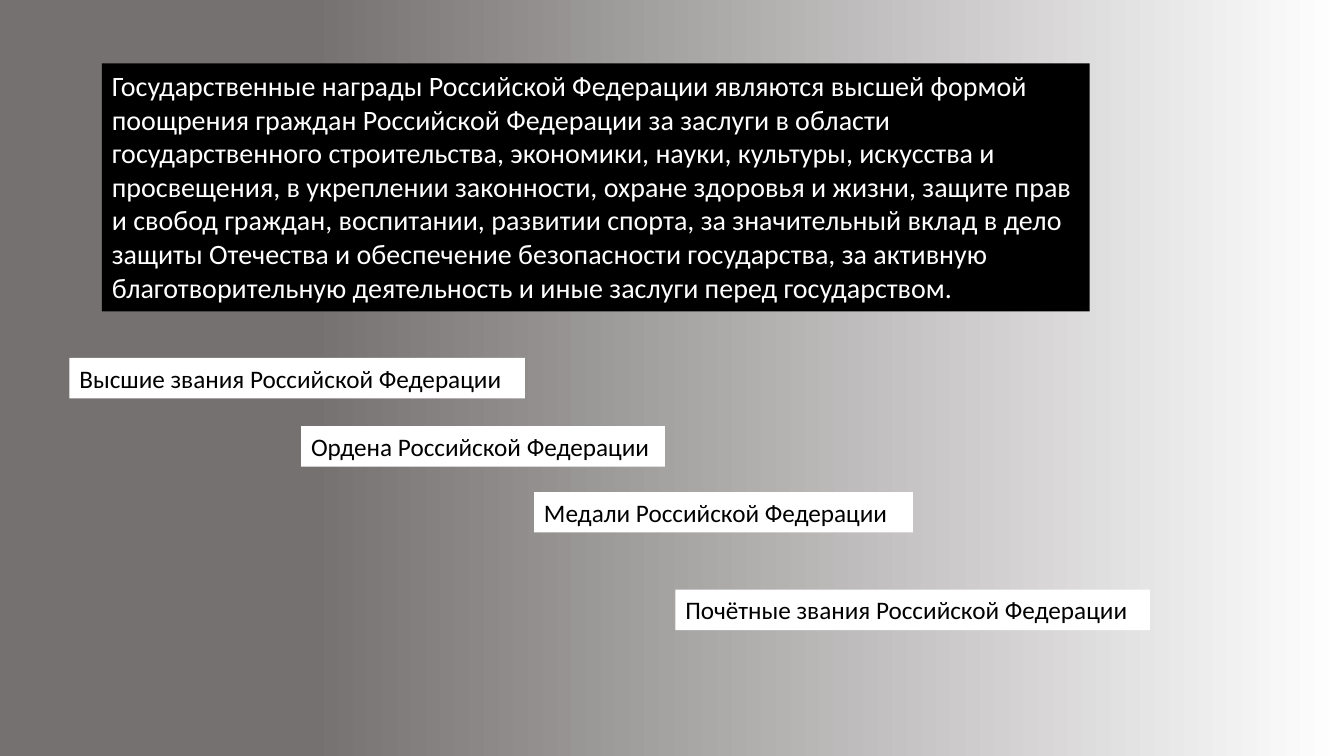
from pptx import Presentation
from pptx.dml.color import RGBColor
from pptx.enum.text import MSO_AUTO_SIZE
from pptx.util import Cm, Pt

GROW = MSO_AUTO_SIZE.SHAPE_TO_FIT_TEXT
BLANK = 6
COLORS = {"gray": "767171", "white": "FFFFFF", "black": "000000"}


def color(name):
    return RGBColor.from_string(COLORS[name])


def add_label(slide, text, left, top, width, height, size, back, ink):
    box = slide.shapes.add_textbox(Cm(left), Cm(top), Cm(width), Cm(height))
    box.fill.solid()
    box.fill.fore_color.rgb = color(back)
    frame = box.text_frame
    frame.word_wrap = True
    frame.auto_size = GROW
    frame.text = text
    font = frame.paragraphs[0].font
    font.name = "Calibri"
    font.size = Pt(size)
    font.color.rgb = color(ink)


deck = Presentation()
deck.slide_width = Cm(33.87)
deck.slide_height = Cm(19.05)
slide = deck.slides.add_slide(deck.slide_layouts[BLANK])

# Background gradient, left to right
fill = slide.background.fill
fill.gradient()
fill.gradient_angle = 0
for stop, (place, name) in zip(fill.gradient_stops, [(0.23, "gray"), (1, "white")]):
    stop.position = place
    stop.color.rgb = color(name)

# Definition of state awards
intro = (
    "Государственные награды Российской Федерации являются высшей формой "
    "поощрения граждан Российской Федерации за заслуги в области "
    "государственного строительства, экономики, науки, культуры, искусства и "
    "просвещения, в укреплении законности, охране здоровья и жизни, защите прав "
    "и свобод граждан, воспитании, развитии спорта, за значительный вклад в дело "
    "защиты Отечества и обеспечение безопасности государства, за активную "
    "благотворительную деятельность и иные заслуги перед государством."
)
add_label(slide, intro, 2.57, 1.6, 24.89, 6.25, 20, "black", "white")

# Staircase of award kinds: name, left, top, width
awards = [
    ("Высшие звания", 1.75, 9.02, 11.48),
    ("Ордена", 7.59, 10.74, 9.17),
    ("Медали", 13.46, 12.4, 9.55),
    ("Почётные звания", 17.02, 14.86, 11.96),
]
for kind, left, top, width in awards:
    text = f"{kind} Российской Федерации"
    add_label(slide, text, left, top, width, 1.02, 18, "white", "black")

deck.save("out.pptx")
